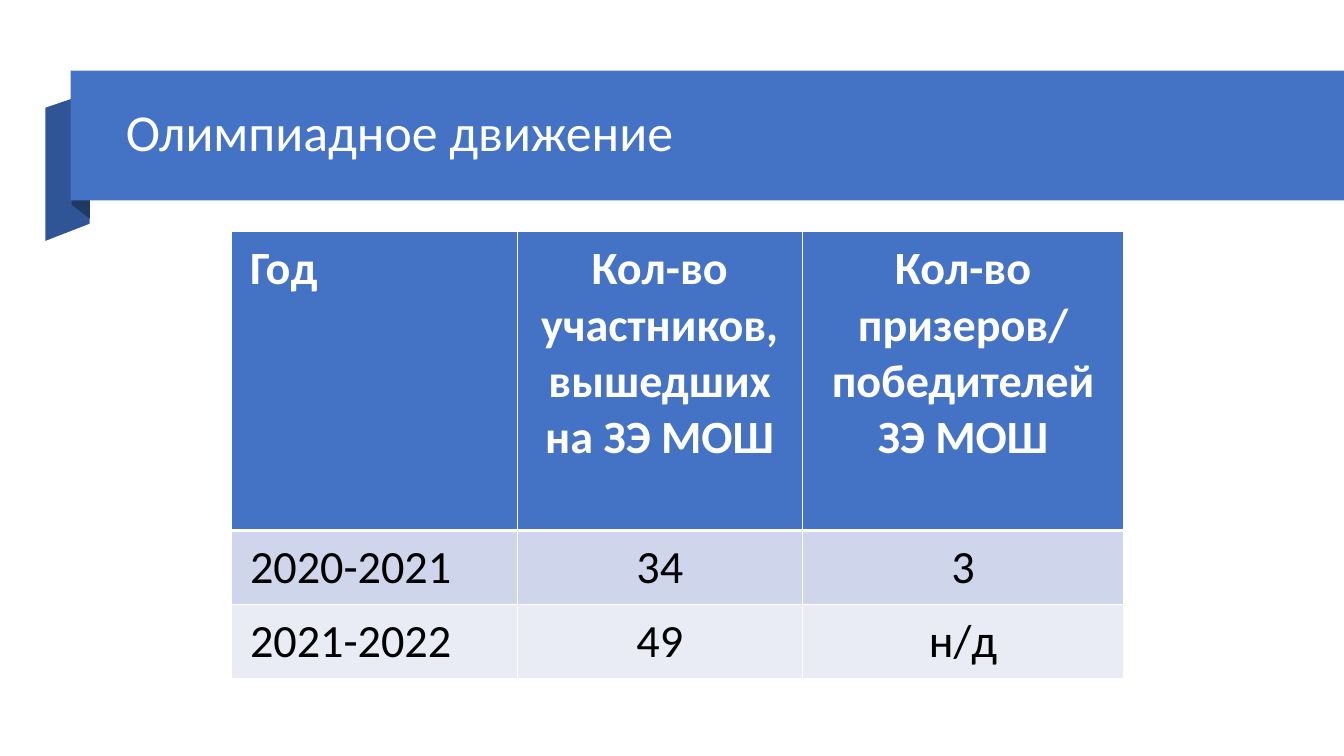
from pptx import Presentation
from pptx.dml.color import RGBColor
from pptx.enum.shapes import MSO_SHAPE
from pptx.enum.text import MSO_ANCHOR, PP_ALIGN
from pptx.oxml import parse_xml
from pptx.oxml.ns import nsdecls
from pptx.util import Pt

RECTANGLE = MSO_SHAPE.RECTANGLE
MIDDLE = MSO_ANCHOR.MIDDLE
LEFT, CENTER = PP_ALIGN.LEFT, PP_ALIGN.CENTER

WHITE = RGBColor(0xFF, 0xFF, 0xFF)
BLACK = RGBColor(0x00, 0x00, 0x00)
BLUE = RGBColor(0x44, 0x72, 0xC4)
RIBBON_BLUE = RGBColor(0x2F, 0x55, 0x97)
FOLD_BLUE = RGBColor(0x20, 0x38, 0x64)
ODD_ROW = RGBColor(0xCF, 0xD5, 0xEA)
EVEN_ROW = RGBColor(0xE9, 0xEB, 0xF5)

FONT = "Calibri"
SLIDE_WIDTH, SLIDE_HEIGHT = 960, 540

# Outlines relative to the top left corner of the title band
RIBBON_TAIL = [(13.7, 109.4), (-18, 121.7), (-18, 26.6), (13.7, 15.8)]
RIBBON_FOLD = [(13.7, 105.8), (0.7, 95.8), (0.7, 0), (13.7, 10.8)]

COLUMN_WIDTHS = [203.8, 203.8, 229.6]
ROW_HEIGHTS = [213.6, 53, 53]
RESULTS = [
    ["Год", "Кол-во участников, вышедших на ЗЭ МОШ",
     "Кол-во призеров/\nпобедителей ЗЭ МОШ"],
    ["2020-2021", "34", "3"],
    ["2021-2022", "49", "н/д"],
]


def write(frame, text, size, color, bold=False, align=LEFT, line_spacing=1.0):
    frame.word_wrap = True
    frame.text = text
    for paragraph in frame.paragraphs:
        paragraph.alignment = align
        paragraph.line_spacing = line_spacing
        for run in paragraph.runs:
            run.font.name = FONT
            run.font.size = Pt(size)
            run.font.bold = bold
            run.font.color.rgb = color


def paint(shape, color):
    shape.shadow.inherit = False
    shape.fill.solid()
    shape.fill.fore_color.rgb = color
    shape.line.fill.background()


def add_outline(slide, left, top, corners, color):
    points = [(Pt(left + x), Pt(top + y)) for x, y in corners]
    builder = slide.shapes.build_freeform(*points[0])
    builder.add_line_segments(points[1:], close=True)
    paint(builder.convert_to_shape(), color)


def add_title_ribbon(slide, title, left, top, width, height):
    add_outline(slide, left, top, RIBBON_TAIL, RIBBON_BLUE)
    add_outline(slide, left, top, RIBBON_FOLD, FOLD_BLUE)
    band = slide.shapes.add_shape(
        RECTANGLE, Pt(left), Pt(top), Pt(width), Pt(height))
    paint(band, BLUE)
    heading = slide.shapes.add_textbox(
        Pt(left + 32.4), Pt(top + 11.5), Pt(width - 98), Pt(69))
    heading.text_frame.vertical_anchor = MIDDLE
    write(heading.text_frame, title, 37, WHITE, line_spacing=0.9)


def set_borders(cell, bottom=1, top=1):
    """Draw white cell borders, widths in points."""
    properties = cell._tc.get_or_add_tcPr()
    widths = {"lnL": 1, "lnR": 1, "lnT": top, "lnB": bottom}
    for index, (side, width) in enumerate(widths.items()):
        properties.insert(index, parse_xml(
            f'<a:{side} {nsdecls("a")} w="{Pt(width)}"><a:solidFill>'
            f'<a:srgbClr val="{WHITE}"/></a:solidFill></a:{side}>'))


def add_results_table(slide, results, left, top):
    table = slide.shapes.add_table(
        len(results), len(COLUMN_WIDTHS), Pt(left), Pt(top),
        Pt(sum(COLUMN_WIDTHS)), Pt(sum(ROW_HEIGHTS))).table
    for column, width in zip(table.columns, COLUMN_WIDTHS):
        column.width = Pt(width)
    for row, height in zip(table.rows, ROW_HEIGHTS):
        row.height = Pt(height)
    for r, entries in enumerate(results):
        header = r == 0
        row_color = BLUE if header else ODD_ROW if r % 2 else EVEN_ROW
        for c, entry in enumerate(entries):
            cell = table.cell(r, c)
            cell.margin_left = cell.margin_right = Pt(13)
            cell.margin_top = cell.margin_bottom = Pt(6.5)
            cell.fill.solid()
            cell.fill.fore_color.rgb = row_color
            set_borders(cell, bottom=3 if header else 1, top=3 if r == 1 else 1)
            write(cell.text_frame, entry, 33, WHITE if header else BLACK,
                  bold=header, align=CENTER if c else LEFT)


def main():
    presentation = Presentation()
    presentation.slide_width = Pt(SLIDE_WIDTH)
    presentation.slide_height = Pt(SLIDE_HEIGHT)
    slide = presentation.slides.add_slide(presentation.slide_layouts[6])
    add_title_ribbon(slide, "Олимпиадное движение", 50.4, 50.4,
                     SLIDE_WIDTH - 50.4, 92.8)
    add_results_table(slide, RESULTS, 165.6, 165.4)
    presentation.save("out.pptx")


if __name__ == "__main__":
    main()
